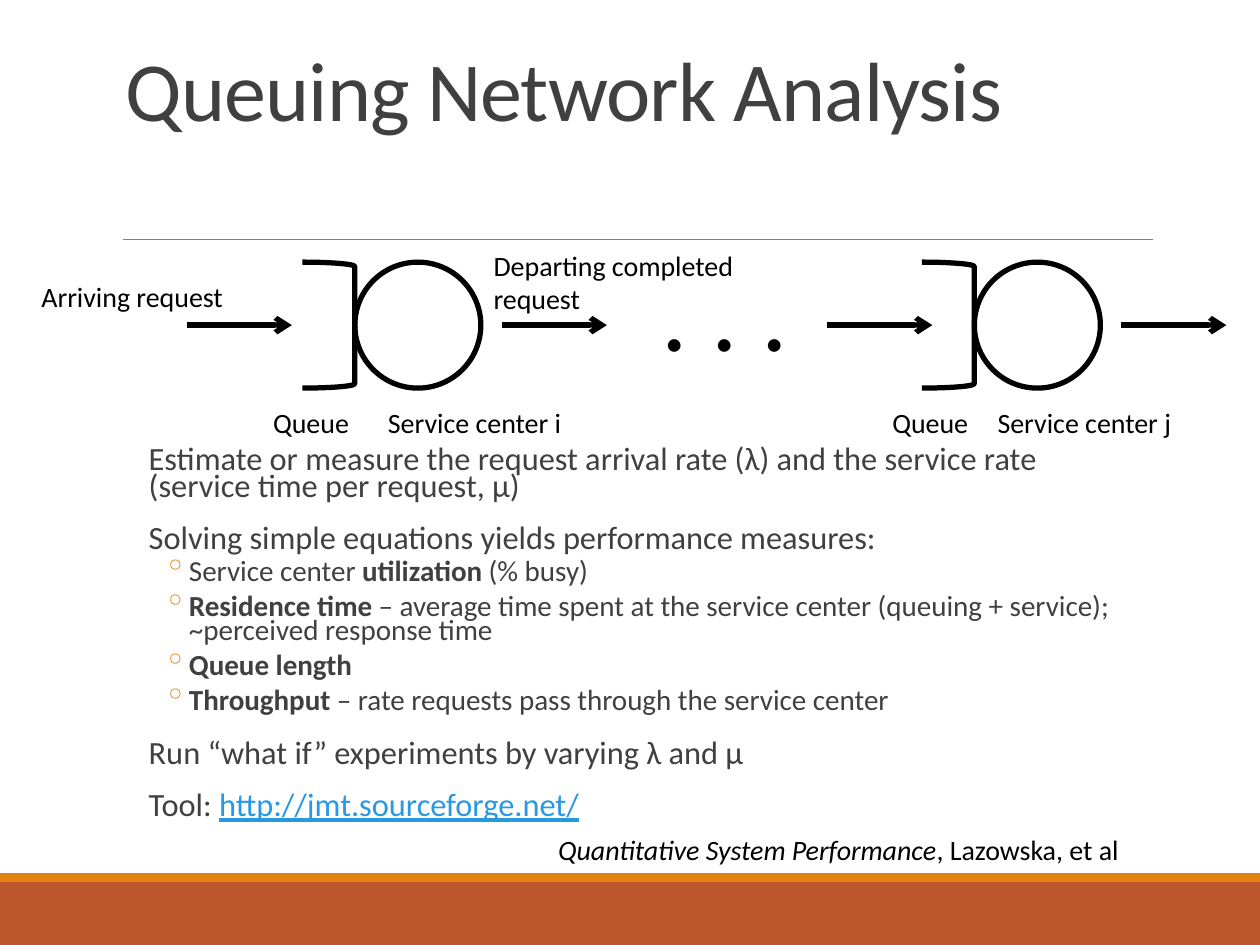
from pptx import Presentation
from pptx.dml.color import RGBColor
from pptx.enum.shapes import MSO_CONNECTOR, MSO_SHAPE
from pptx.enum.text import MSO_ANCHOR
from pptx.oxml.ns import qn
from pptx.util import Pt
from lxml.etree import SubElement

BLACK, GREY = "000000", "404040"
ORANGE, RUST, BLUE = "E48312", "BD582C", "2998E3"


def add_text(paragraph, text, **font_values):
    run = paragraph.add_run()
    run.text = text
    values = {"name": "Calibri", "size": Pt(16), "color": BLACK} | font_values
    run.font.color.rgb = RGBColor.from_string(values.pop("color"))
    for name, value in values.items():
        setattr(run.font, name, value)
    return run


def add_line(x1, x2, y, color, width):
    """Add a horizontal line without a shadow and return its a:ln element."""
    line = slide.shapes.add_connector(MSO_CONNECTOR.STRAIGHT, Pt(x1), Pt(y), Pt(x2), Pt(y))
    line.line.color.rgb = RGBColor.from_string(color)
    line.line.width = Pt(width)
    properties = line._element.spPr
    SubElement(properties, qn("a:effectLst"))
    return properties.find(qn("a:ln"))


presentation = Presentation()
presentation.slide_width, presentation.slide_height = Pt(720), Pt(540)
slide = presentation.slides.add_slide(presentation.slide_layouts[6])

# Footer bands and the rule under the title
for top, height, color in [(504, 36, RUST), (499, 5, ORANGE)]:
    band = slide.shapes.add_shape(MSO_SHAPE.RECTANGLE, 0, Pt(top), Pt(720), Pt(height))
    band.shadow.inherit = False
    band.fill.solid()
    band.fill.fore_color.rgb = RGBColor.from_string(color)
    band.line.fill.background()
add_line(70.5, 659, 136.8, "808080", 0.5)

# Title
title = slide.shapes.add_textbox(Pt(64.8), Pt(22.3), Pt(594), Pt(60.5)).text_frame
title.word_wrap = True
title.vertical_anchor = MSO_ANCHOR.BOTTOM
title.paragraphs[0].line_spacing = 0.85
title_run = add_text(title.paragraphs[0], "Queuing Network Analysis", size=Pt(48), color=GREY)
title_run._r.get_or_add_rPr().set("spc", "-50")

# Body: level and runs, each run with its own font values
bold = {"bold": True}
body_paragraphs = [
    (0, [("Estimate or measure the request arrival rate (λ) and the service rate "
          "(service time per request, μ)", {})]),
    (0, [("Solving simple equations yields performance measures:", {})]),
    (1, [("Service center ", {}), ("utilization", bold), (" (% busy)", {})]),
    (1, [("Residence time", bold),
         (" – average time spent at the service center (queuing + service); "
          "~perceived response time", {})]),
    (1, [("Queue length", bold)]),
    (1, [("Throughput", bold), (" – rate requests pass through the service center", {})]),
    (0, [("Run “what if” experiments by varying λ and μ", {})]),
    (0, [("Tool: ", {}),
         ("http://jmt.sourceforge.net/", {"color": BLUE, "underline": True})]),
]
level_formats = [
    {"space_before": Pt(12), "space_after": Pt(2), "line_spacing": 0.7},
    {"space_before": Pt(2), "space_after": Pt(4), "line_spacing": 0.7, "level": 1},
]
level_sizes = [Pt(18.5), Pt(16.6)]
level_indents = [(Pt(7.2), 0), (Pt(30.2), Pt(-14.4))]

body = slide.shapes.add_textbox(Pt(77.8), Pt(252.7), Pt(560), Pt(227.5)).text_frame
body.word_wrap = True
body.margin_left = body.margin_right = 0
for index, (level, runs) in enumerate(body_paragraphs):
    paragraph = body.add_paragraph() if index else body.paragraphs[0]
    for name, value in level_formats[level].items():
        setattr(paragraph, name, value)
    if index == 0:
        paragraph.space_before = Pt(0)
    properties = paragraph._p.get_or_add_pPr()
    margin, indent = level_indents[level]
    properties.set("marL", str(margin))
    properties.set("indent", str(indent))
    if level:
        bullet_color = SubElement(properties, qn("a:buClr"))
        SubElement(bullet_color, qn("a:srgbClr"), val=ORANGE)
        SubElement(properties, qn("a:buChar"), char="◦")
    for text, font_values in runs:
        add_text(paragraph, text, **({"size": level_sizes[level], "color": GREY} | font_values))

# Two service centers, each a queue bracket and a circle
for left in (172.8, 526.8):
    for kind, offset, width in [(MSO_SHAPE.RIGHT_BRACKET, 0, 30), (MSO_SHAPE.OVAL, 30, 72)]:
        shape = slide.shapes.add_shape(kind, Pt(left + offset), Pt(149.8), Pt(width), Pt(72))
        shape.shadow.inherit = False
        shape.fill.background()
        shape.line.color.rgb = RGBColor.from_string(BLACK)
        shape.line.width = Pt(3)

for start in (106.8, 286.8, 472.8, 640.8):
    outline = add_line(start, start + 60, 185.8, BLACK, 3)
    SubElement(outline, qn("a:tailEnd"), type="arrow")

# Labels: left, top, width, height, runs
labels = [
    (16.6, 156.2, 133, 24.5, [("Arriving request", {})]),
    (149, 228.2, 63.5, 24.5, [("Queue", {})]),
    (214.6, 228.2, 130.5, 24.5, [("Service center i", {})]),
    (275, 138.2, 174, 42.5, [("Departing completed request", {})]),
    (502.8, 228.2, 63.5, 24.5, [("Queue", {})]),
    (563, 228.2, 130.5, 24.5, [("Service center j", {})]),
    (370.8, 137.5, 100, 72.7, [(". . .", {"size": Pt(60)})]),
    (311.8, 472.3, 381, 24.5,
     [("Quantitative System Performance", {"italic": True}), (", Lazowska, et al", {})]),
]
for left, top, width, height, runs in labels:
    label = slide.shapes.add_textbox(Pt(left), Pt(top), Pt(width), Pt(height)).text_frame
    label.word_wrap = True
    for text, font_values in runs:
        add_text(label.paragraphs[0], text, **font_values)

presentation.save("out.pptx")
